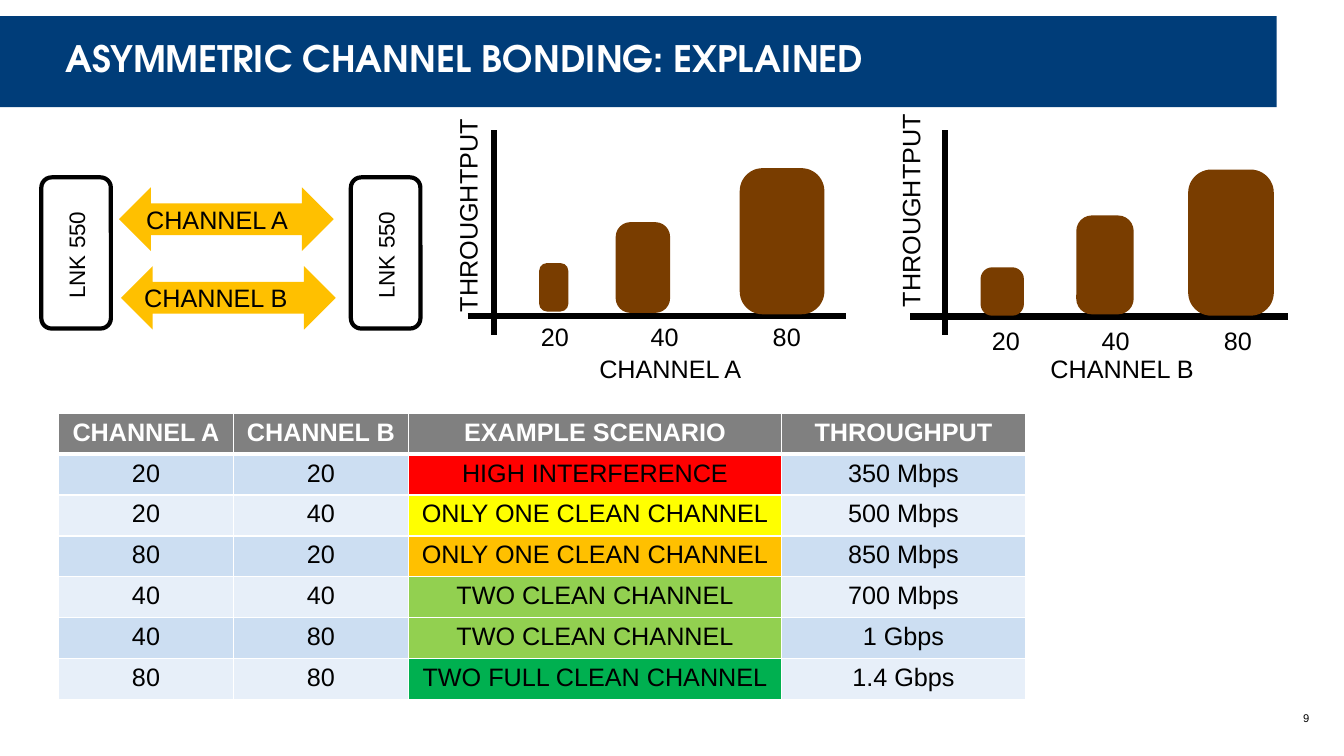
from lxml.etree import SubElement
from pptx import Presentation
from pptx.dml.color import RGBColor
from pptx.enum.shapes import MSO_CONNECTOR, MSO_SHAPE
from pptx.enum.text import MSO_ANCHOR, PP_ALIGN
from pptx.oxml.ns import qn
from pptx.util import Pt

BODY = {"name": "Arial", "size": Pt(18), "bold": False}
HEAD = {**BODY, "bold": True}
SMALL = {**BODY, "size": Pt(8)}
DEVICE = {**BODY, "size": Pt(16)}
TITLE = {"name": "TeX Gyre Adventor", "size": Pt(26), "bold": True}

CHARTS = [
    {"caption": "CHANNEL A", "box": (334, 93, 270, 146), "axis": (18.7, 132.5),
     "name_end": 130, "tick_gap": 4.3,
     "bars": [(32.4, 20.9, 34.6, 3), (87.1, 38.9, 64.8, 2), (175.7, 60.5, 104.4, 1)]},
    {"caption": "CHANNEL B", "box": (650.2, 93, 270, 146), "axis": (24.7, 133),
     "name_end": 126.5, "tick_gap": 6.5,
     "bars": [(25.5, 31, 34.6, 0.5), (93.9, 41, 70.6, 1.5), (173.8, 61.2, 104.4, 0.5)]},
]
TICKS = [("20", 33.6), ("40", 112), ("80", 199.3)]

HEADERS = ["CHANNEL A", "CHANNEL B", "EXAMPLE SCENARIO", "THROUGHPUT"]
SCENARIOS = [
    ("20", "20", "HIGH INTERFERENCE", "350 Mbps", "FF0000"),
    ("20", "40", "ONLY ONE CLEAN CHANNEL", "500 Mbps", "FFFF00"),
    ("80", "20", "ONLY ONE CLEAN CHANNEL", "850 Mbps", "FFC000"),
    ("40", "40", "TWO CLEAN CHANNEL", "700 Mbps", "92D050"),
    ("40", "80", "TWO CLEAN CHANNEL", "1 Gbps", "92D050"),
    ("80", "80", "TWO FULL CLEAN CHANNEL", "1.4 Gbps", "00B050"),
]


def paint(fill, color):
    """Fill with a solid hex colour."""
    fill.solid()
    fill.fore_color.rgb = RGBColor.from_string(color)


def write(tf, text, fmt, color="000000", align=PP_ALIGN.LEFT):
    """Write one formatted paragraph and return it."""
    p = tf.paragraphs[0]
    p.alignment = align
    r = p.add_run()
    r.text = text
    for key, value in fmt.items():
        setattr(r.font, key, value)
    paint(r.font.fill, color)
    return p


def add_text(slide, box, text, fmt=BODY, color="000000", align=PP_ALIGN.LEFT,
             margins=(0, 0, 0, 0), rotation=0):
    """Add a text box, middle anchored, and return its paragraph."""
    sp = slide.shapes.add_textbox(*map(Pt, box))
    sp.rotation = rotation
    tf = sp.text_frame
    layout = {"word_wrap": True, "vertical_anchor": MSO_ANCHOR.MIDDLE}
    sides = ("margin_left", "margin_top", "margin_right", "margin_bottom")
    layout.update(zip(sides, map(Pt, margins)))
    for key, value in layout.items():
        setattr(tf, key, value)
    return write(tf, text, fmt, color, align)


def add_upright(slide, cx, cy, length, text, fmt=BODY, align=PP_ALIGN.LEFT):
    """Add text that reads upwards, centred on a point."""
    add_text(slide, (cx - length / 2, cy - 11, length, 22), text, fmt,
             align=align, rotation=270)


def add_block(slide, kind, box, fill=None, outline=None, corner=None):
    """Add a preset shape with a plain fill or outline."""
    sp = slide.shapes.add_shape(kind, *map(Pt, box))
    sp.shadow.inherit = False
    if corner is not None:
        sp.adjustments[0] = corner
    if fill:
        paint(sp.fill, fill)
    else:
        sp.fill.background()
    if outline:
        paint(sp.line.fill, outline)
        sp.line.width = Pt(3)
    else:
        sp.line.fill.background()


def add_axis(slide, x1, y1, x2, y2):
    """Add a thick black axis line."""
    line = slide.shapes.add_connector(MSO_CONNECTOR.STRAIGHT, *map(Pt, (x1, y1, x2, y2)))
    paint(line.line.fill, "000000")
    line.line.width = Pt(4.5)
    SubElement(line._element.spPr, qn("a:effectLst"))


def add_header(slide, x, y, w, h):
    """Draw the title band."""
    add_block(slide, MSO_SHAPE.RECTANGLE, (x, y, w, h), "003D79")
    p = add_text(slide, (x, y + 2.9, w - 12, h - 7.2),
                 "ASYMMETRIC CHANNEL BONDING: EXPLAINED", TITLE, "FFFFFF",
                 margins=(46.8, 3.6, 7.2, 3.6))
    p.line_spacing = 0.9


def add_link(slide, x, y, w, h):
    """Draw two radios joined by two channel arrows."""
    device_w, arrow_w, arrow_h = 49.7, 153.4, 45.4
    for left in (x, x + w - device_w):
        add_block(slide, MSO_SHAPE.ROUNDED_RECTANGLE, (left, y, device_w, h),
                  outline="000000", corner=0.148)
        add_upright(slide, left + device_w / 2, y + h / 2 + 1.5, h, "LNK 550",
                    DEVICE, PP_ALIGN.CENTER)
    for i, (name, indent) in enumerate([("CHANNEL A", 19.4), ("CHANNEL B", 16.6)]):
        left, top = x + 55.5 + 1.4 * i, y + 7.2 + 56.2 * i
        add_block(slide, MSO_SHAPE.LEFT_RIGHT_ARROW, (left, top, arrow_w, arrow_h), "FFC000")
        add_text(slide, (left + indent, top + 7, 125, 31), name)


def add_sketch_chart(slide, chart):
    """Draw a sketched bar chart inside its box."""
    x, y, w, h = chart["box"]
    axis_x, axis_y = x + chart["axis"][0], y + chart["axis"][1]
    add_axis(slide, axis_x, y, axis_x, y + h)
    add_axis(slide, x, axis_y, x + w, axis_y)
    for dx, bar_w, bar_h, gap in chart["bars"]:
        add_block(slide, MSO_SHAPE.ROUNDED_RECTANGLE,
                  (axis_x + dx, axis_y - gap - bar_h, bar_w, bar_h),
                  "793D00", corner=0.271)
    for label, dx in TICKS:
        add_text(slide, (axis_x + dx, axis_y + chart["tick_gap"], 28, 21.6), label)
    add_text(slide, (axis_x + 75.4, axis_y + 26.7, 108.7, 21.6), chart["caption"])
    add_upright(slide, x, y + chart["name_end"] - 73, 146, "THROUGHTPUT")


def set_borders(cell, **widths):
    """Give a cell white borders of the given widths."""
    tc_pr = cell._tc.get_or_add_tcPr()
    for i, (side, width) in enumerate(widths.items()):
        ln = tc_pr.makeelement(qn(f"a:ln{side}"), {"w": str(Pt(width))})
        SubElement(SubElement(ln, qn("a:solidFill")), qn("a:srgbClr"), val="FFFFFF")
        tc_pr.insert(i, ln)


def add_scenarios(slide, x, y, w, h):
    """Build the table of channel scenarios."""
    rows = [(*HEADERS, "808080")] + SCENARIOS
    shares = (1.73, 1.74, 3.7, 2.42)
    frame = slide.shapes.add_table(len(rows), len(shares), *map(Pt, (x, y, w, h)))
    table = frame.table
    for col, share in zip(table.columns, shares):
        col.width = Pt(w * share / sum(shares))
    for i, (*texts, accent) in enumerate(rows):
        table.rows[i].height = Pt(h / len(rows))
        band = "CCDEF2" if i % 2 else "E7EFF9"
        for j, text in enumerate(texts):
            cell = table.cell(i, j)
            paint(cell.fill, accent if i == 0 or j == 2 else band)
            set_borders(cell, L=1, R=1, T=3 if i == 1 else 1, B=3 if i == 0 else 1)
            write(cell.text_frame, text, BODY if i else HEAD,
                  "000000" if i else "FFFFFF", PP_ALIGN.CENTER)


def main():
    """Build and save the slide."""
    prs = Presentation()
    prs.slide_width, prs.slide_height = Pt(960), Pt(540)
    slide = prs.slides.add_slide(prs.slide_layouts[6])
    add_header(slide, 0, 11.5, 912, 65)
    add_link(slide, 29.5, 126.7, 270.8, 108)
    for chart in CHARTS:
        add_sketch_chart(slide, chart)
    add_scenarios(slide, 42, 295.2, 690.5, 204.5)
    add_text(slide, (928, 508.3, 10, 9.4), "9", SMALL, align=PP_ALIGN.CENTER)
    prs.save("out.pptx")


if __name__ == "__main__":
    main()
